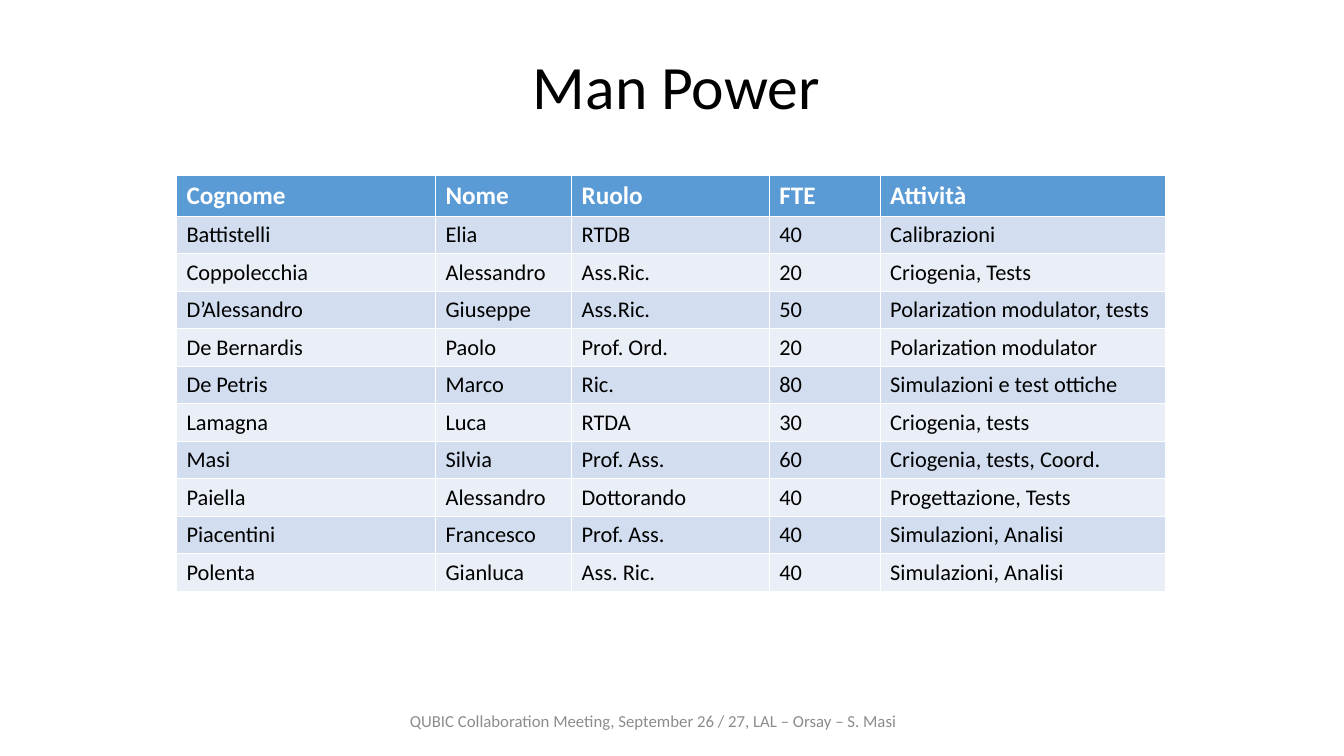
from dataclasses import dataclass

from pptx import Presentation
from pptx.dml.color import RGBColor as Rgb
from pptx.enum import text as tx
from pptx.util import Inches, Pt


@dataclass(frozen=True)
class Theme:
    face: str = "Calibri"
    ink: str = "000000"
    white: str = "FFFFFF"
    gray: str = "8C8C8C"
    head: str = "5B9BD5"
    bands: tuple = ("D2DEEF", "EAEFF7")
    title: int = 44
    label: int = 18
    body: int = 16
    foot: int = 12


THEME = Theme()

WIDTHS = (2.57, 1.35, 1.96, 1.1, 2.83)
ROW = 0.34
STAFF = (
    ("Cognome", "Nome", "Ruolo", "FTE", "Attività"),
    ("Battistelli", "Elia", "RTDB", "40", "Calibrazioni"),
    ("Coppolecchia", "Alessandro", "Ass.Ric.", "20", "Criogenia, Tests"),
    ("D’Alessandro", "Giuseppe", "Ass.Ric.", "50", "Polarization modulator, tests"),
    ("De Bernardis", "Paolo", "Prof. Ord.", "20", "Polarization modulator"),
    ("De Petris", "Marco", "Ric.", "80", "Simulazioni e test ottiche"),
    ("Lamagna", "Luca", "RTDA", "30", "Criogenia, tests"),
    ("Masi", "Silvia", "Prof. Ass.", "60", "Criogenia, tests, Coord."),
    ("Paiella", "Alessandro", "Dottorando", "40", "Progettazione, Tests"),
    ("Piacentini", "Francesco", "Prof. Ass.", "40", "Simulazioni, Analisi"),
    ("Polenta", "Gianluca", "Ass. Ric.", "40", "Simulazioni, Analisi"),
)


def write(frame, words, size, color, bold=False, align=tx.PP_ALIGN.LEFT):
    """Put one styled paragraph in a text frame."""
    frame.text = words
    para = frame.paragraphs[0]
    para.alignment = align
    font = para.font
    font.name, font.size, font.bold = THEME.face, Pt(size), bold
    font.color.rgb = Rgb.from_string(color)
    return para


def add_title(slide, box, words):
    title = slide.shapes.title
    title.left, title.top, title.width, title.height = map(Inches, box)
    title.text_frame.vertical_anchor = tx.MSO_ANCHOR.MIDDLE
    para = write(title.text_frame, words, THEME.title, THEME.ink,
                 align=tx.PP_ALIGN.CENTER)
    para.line_spacing = 0.9


def add_staff(slide, left, top):
    # The default table style supplies the white rules
    size = sum(WIDTHS), ROW * len(STAFF)
    table = slide.shapes.add_table(
        len(STAFF), len(WIDTHS), *map(Inches, (left, top, *size))).table
    for col, width in zip(table.columns, WIDTHS):
        col.width = Inches(width)
    for i, (row, person) in enumerate(zip(table.rows, STAFF)):
        row.height = Inches(ROW)
        if i == 0:
            fill, look = THEME.head, (THEME.label, THEME.white, True)
        else:
            fill, look = THEME.bands[(i - 1) % 2], (THEME.body, THEME.ink)
        for cell, words in zip(row.cells, person):
            cell.fill.solid()
            cell.fill.fore_color.rgb = Rgb.from_string(fill)
            write(cell.text_frame, words, *look)


def add_footer(slide, box, words):
    frame = slide.shapes.add_textbox(*map(Inches, box)).text_frame
    frame.word_wrap = True
    frame.vertical_anchor = tx.MSO_ANCHOR.MIDDLE
    write(frame, words, THEME.foot, THEME.gray, align=tx.PP_ALIGN.CENTER)


def main():
    deck = Presentation()
    deck.slide_width, deck.slide_height = Inches(13.33), Inches(7.5)
    slide = deck.slides.add_slide(deck.slide_layouts.get_by_name("Title Only"))

    # Heading, staff table and footer, from top to bottom
    add_title(slide, (2.4, 0.16, 8.62, 1.45), "Man Power")
    add_staff(slide, 1.75, 1.74)
    add_footer(slide, (3.81, 6.95, 5.34, 0.4),
               "QUBIC Collaboration Meeting, September 26 / 27, LAL – Orsay – S. Masi")
    deck.save("out.pptx")


if __name__ == "__main__":
    main()
